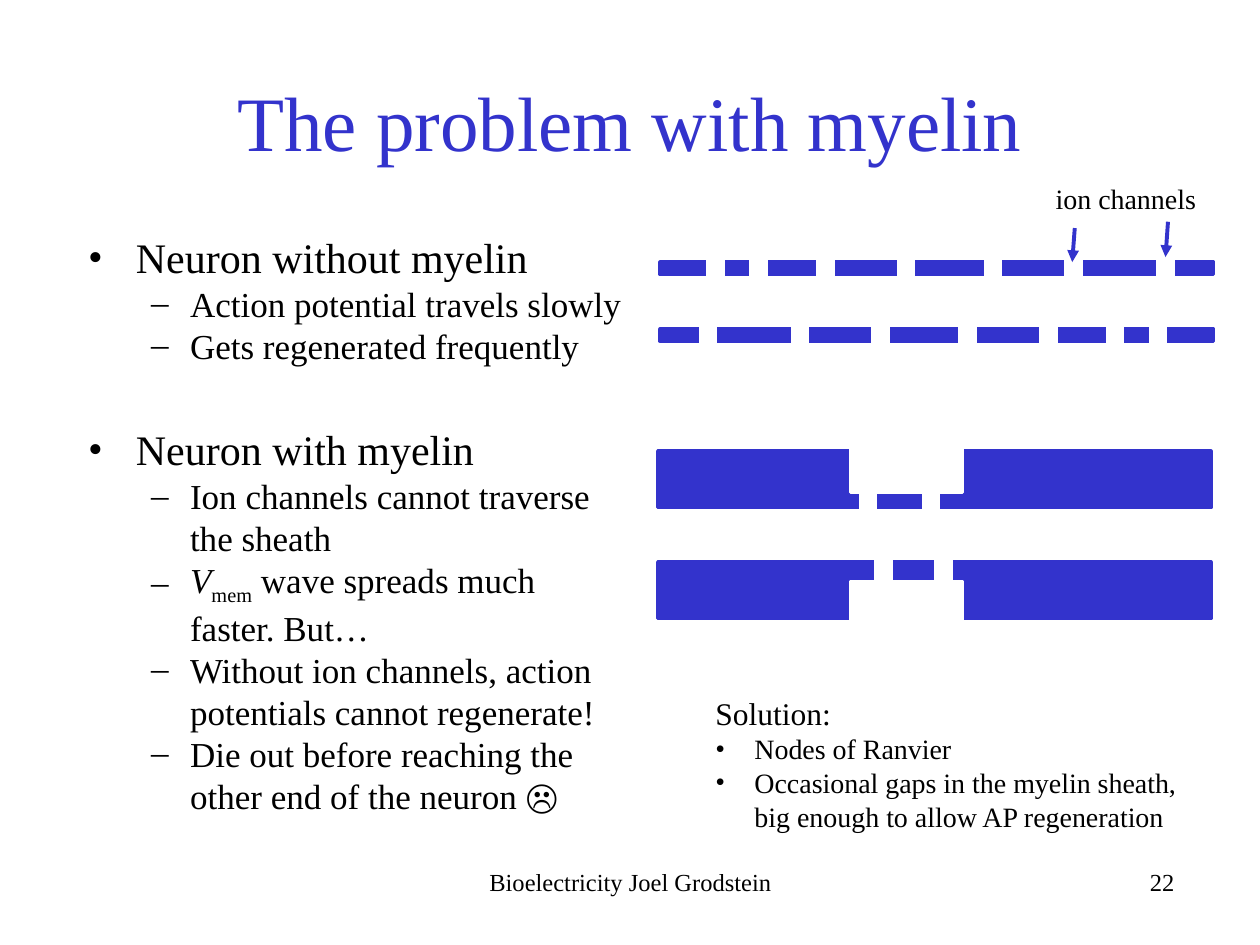
from lxml.etree import SubElement
from pptx import Presentation
from pptx.dml.color import RGBColor
from pptx.enum.shapes import MSO_CONNECTOR, MSO_SHAPE
from pptx.enum.text import MSO_ANCHOR, PP_ALIGN
from pptx.oxml.ns import qn
from pptx.util import Inches, Pt

COLORS = {"blue": "3333CC", "white": "FFFFFF", "black": "000000"}
FONT = "Times New Roman"
MEMBRANE_LEFT, MEMBRANE_WIDTH = 5.24, 4.39
SHEATH_LEFT = 5.22
CHANNEL_WIDTH, CHANNEL_HEIGHT = 0.12, 0.19
CHANNEL_LEFTS = [5.62, 5.96, 6.49, 7.13, 7.82, 8.46, 9.19]
NODE_CHANNELS = [(6.83, 3.87), (7.33, 3.85), (6.95, 4.44), (7.43, 4.41)]


def color(name):
    return RGBColor.from_string(COLORS[name])


def add_run(paragraph, text, size=20, fill="black", italic=False, baseline=0):
    run = paragraph.add_run()
    run.text = text
    run.font.name = FONT
    run.font.size = Pt(size)
    run.font.italic = italic
    run.font.color.rgb = color(fill)
    if baseline:
        run._r.get_or_add_rPr().set("baseline", str(baseline * 1000))


def set_bullet(paragraph, character, margin, hanging):
    properties = paragraph._p.get_or_add_pPr()
    properties.set("marL", str(Inches(margin)))
    properties.set("indent", str(-Inches(hanging)))
    SubElement(properties, qn("a:buFont")).set("typeface", FONT)
    SubElement(properties, qn("a:buChar")).set("char", character)


class SlideBuilder:
    def __init__(self, slide):
        self.slide = slide

    def title(self, text, left, top, width, height):
        title = self.slide.shapes.title
        title.left, title.top = Inches(left), Inches(top)
        title.width, title.height = Inches(width), Inches(height)
        title.text_frame.vertical_anchor = MSO_ANCHOR.MIDDLE
        paragraph = title.text_frame.paragraphs[0]
        paragraph.alignment = PP_ALIGN.CENTER
        add_run(paragraph, text, size=44, fill="blue")

    def text_box(self, left, top, width, height):
        box = self.slide.shapes.add_textbox(
            Inches(left), Inches(top), Inches(width), Inches(height))
        box.text_frame.word_wrap = True
        return box.text_frame

    def label(self, text, left, top, width, height, size=14, align=PP_ALIGN.LEFT):
        paragraph = self.text_box(left, top, width, height).paragraphs[0]
        paragraph.alignment = align
        add_run(paragraph, text, size=size)

    def add_paragraph(self, frame, runs, size, bullet=None, level=0, before=0):
        first = frame.paragraphs[0]
        paragraph = frame.add_paragraph() if first.runs else first
        paragraph.level = level
        paragraph.space_before = Pt(before)
        if bullet:
            set_bullet(paragraph, *bullet)
        for text, style in runs:
            add_run(paragraph, text, size=size, **style)

    def group(self):
        return self.slide.shapes.add_group_shape().shapes

    def rectangle(self, shapes, fill, left, top, width, height):
        shape = shapes.add_shape(
            MSO_SHAPE.RECTANGLE, Inches(left), Inches(top), Inches(width), Inches(height))
        shape.shadow.inherit = False
        shape.fill.solid()
        shape.fill.fore_color.rgb = color(fill)
        shape.line.color.rgb = color(fill)
        shape.line.width = Pt(2)

    def channel(self, shapes, left, top):
        self.rectangle(shapes, "white", left, top, CHANNEL_WIDTH, CHANNEL_HEIGHT)

    def membrane(self, top, channel_lefts):
        shapes = self.group()
        self.rectangle(shapes, "blue", MEMBRANE_LEFT, top, MEMBRANE_WIDTH, 0.1)
        for left in channel_lefts:
            self.channel(shapes, left, top - 0.04)

    def arrow(self, start_x, start_y, end_x, end_y):
        connector = self.slide.shapes.add_connector(
            MSO_CONNECTOR.STRAIGHT, Inches(start_x), Inches(start_y),
            Inches(end_x), Inches(end_y))
        connector.line.color.rgb = color("blue")
        connector.line.width = Pt(2.25)
        line = connector.line._get_or_add_ln()
        SubElement(line, qn("a:tailEnd")).set("type", "triangle")
        SubElement(connector._element.spPr, qn("a:effectLst"))


def plain(text):
    return [(text, {})]


def add_body(builder):
    heading = {"size": 24, "bullet": ("•", 0.38, 0.38)}
    detail = {"size": 20, "bullet": ("–", 0.81, 0.31), "level": 1}
    wave = [("V", {"italic": True}), ("mem", {"baseline": -25}),
            (" wave spreads much faster. But…", {})]
    frame = builder.text_box(0.6, 1.79, 4.48, 4.68)
    sections = [
        ("Neuron without myelin", 3, [
            plain("Action potential travels slowly"),
            plain("Gets regenerated frequently")]),
        ("Neuron with myelin", 33, [
            plain("Ion channels cannot traverse the sheath"),
            wave,
            plain("Without ion channels, action potentials cannot regenerate!"),
            plain("Die out before reaching the other end of the neuron ☹")]),
    ]
    for text, before, details in sections:
        builder.add_paragraph(frame, plain(text), before=before, **heading)
        for runs in details:
            builder.add_paragraph(frame, runs, **detail)


def add_neurons(builder):
    mirror = 2 * MEMBRANE_LEFT + MEMBRANE_WIDTH - CHANNEL_WIDTH
    builder.membrane(2.08, CHANNEL_LEFTS)
    builder.membrane(2.61, [mirror - left for left in CHANNEL_LEFTS])
    builder.label("ion channels", 8.28, 1.39, 1.44, 0.37, size=16)
    builder.arrow(9.27, 1.76, 9.25, 2.04)
    builder.arrow(8.53, 1.81, 8.51, 2.08)

    for top in (3.58, 4.46):
        builder.rectangle(builder.slide.shapes, "blue", SHEATH_LEFT, top, MEMBRANE_WIDTH, 0.45)
    node = builder.group()
    for top in (3.38, 4.62):
        builder.rectangle(node, "white", 6.75, top, 0.89, 0.53)
    for left, top in NODE_CHANNELS:
        builder.channel(node, left, top)


def add_solution(builder):
    frame = builder.text_box(5.58, 5.46, 4.1, 1.21)
    builder.add_paragraph(frame, plain("Solution:"), 18)
    for text in ("Nodes of Ranvier",
                 "Occasional gaps in the myelin sheath, big enough to allow AP regeneration"):
        builder.add_paragraph(frame, plain(text), 16, bullet=("•", 0.31, 0.31))


def main():
    presentation = Presentation()
    presentation.slide_width, presentation.slide_height = Inches(10), Inches(7.5)
    builder = SlideBuilder(presentation.slides.add_slide(presentation.slide_layouts[5]))
    builder.title("The problem with myelin", 0.75, 0.33, 8.5, 1.25)
    add_body(builder)
    builder.label("Bioelectricity Joel Grodstein", 3.42, 6.83, 3.17, 0.34, align=PP_ALIGN.CENTER)
    builder.label("22", 6.25, 6.83, 3.17, 0.5, align=PP_ALIGN.RIGHT)
    add_neurons(builder)
    add_solution(builder)
    presentation.save("out.pptx")


if __name__ == "__main__":
    main()
